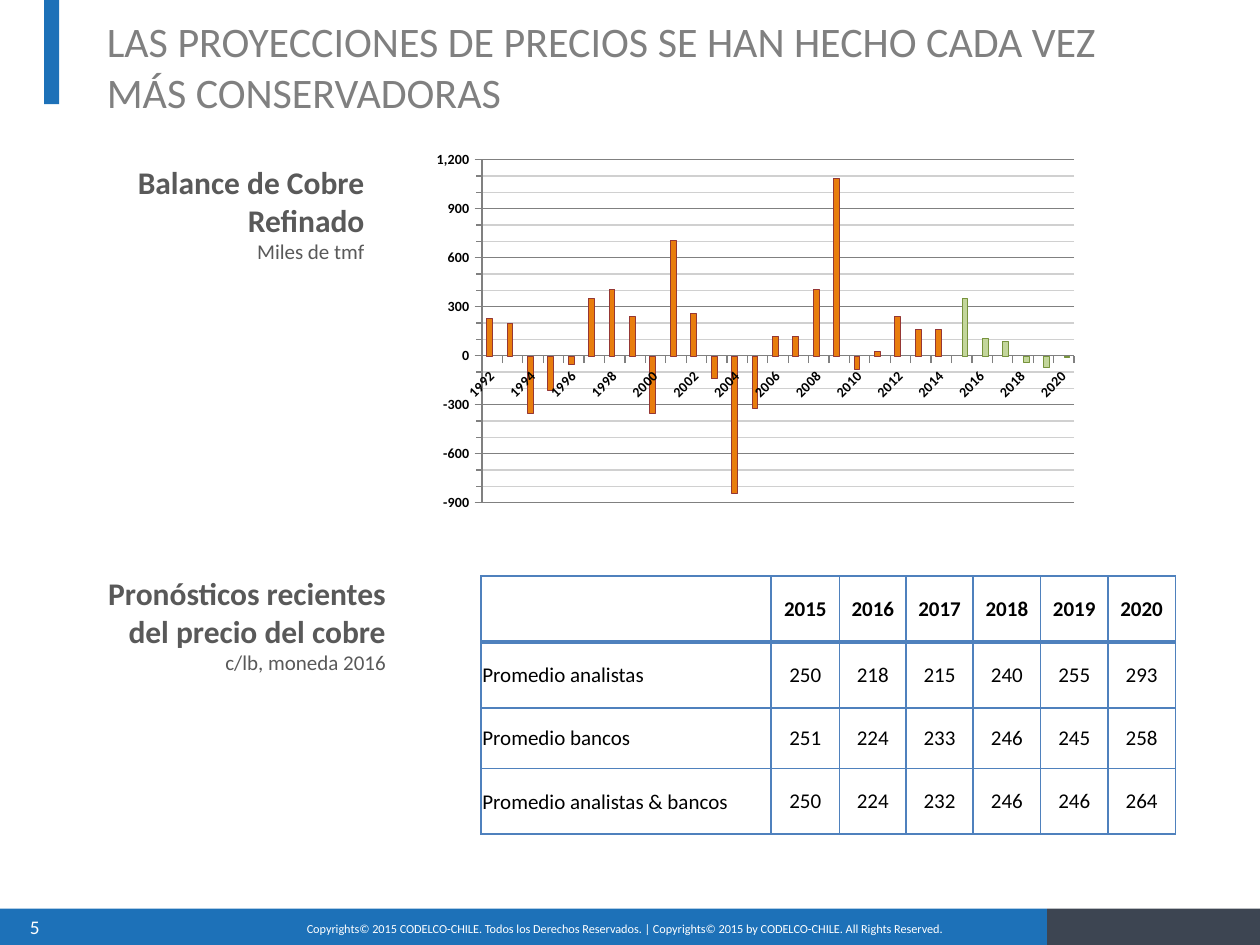
from dataclasses import dataclass
from lxml.etree import SubElement
from pptx import Presentation
from pptx.chart.data import CategoryChartData
from pptx.dml.color import RGBColor
from pptx.enum.chart import XL_CHART_TYPE, XL_TICK_LABEL_POSITION, XL_TICK_MARK
from pptx.enum.shapes import MSO_SHAPE
from pptx.enum.text import MSO_ANCHOR, PP_ALIGN
from pptx.oxml import parse_xml
from pptx.oxml.ns import nsdecls, qn
from pptx.util import Pt


@dataclass(frozen=True)
class Theme:
    font: str = "Calibri"
    blue: RGBColor = RGBColor(0x1D, 0x71, 0xB8)
    slate: RGBColor = RGBColor(0x3D, 0x45, 0x52)
    white: RGBColor = RGBColor(0xFF, 0xFF, 0xFF)
    black: RGBColor = RGBColor(0, 0, 0)
    gray: RGBColor = RGBColor(0x80, 0x80, 0x80)
    dark: RGBColor = RGBColor(0x59, 0x59, 0x59)
    pale: RGBColor = RGBColor(0xD0, 0xD0, 0xD0)
    orange: RGBColor = RGBColor(0xE8, 0x7D, 0x0D)
    red: RGBColor = RGBColor(0x95, 0x37, 0x35)
    green: RGBColor = RGBColor(0xC3, 0xD6, 0x9B)
    olive: RGBColor = RGBColor(0x77, 0x93, 0x3C)
    border: RGBColor = RGBColor(0x4F, 0x81, 0xBD)
    title: int = 24
    head: int = 18
    body: int = 12
    page: int = 11
    axis: int = 8
    foot: int = 7


theme = Theme()


def add_run(para, text, size, color, bold=False):
    run = para.add_run()
    run.text = text
    font = run.font
    font.name, font.size, font.bold = theme.font, Pt(size), bold
    font.color.rgb = color


def add_text(box, lines, align=PP_ALIGN.LEFT, anchor=MSO_ANCHOR.MIDDLE):
    """Each line is (text, size, color, bold) and makes one paragraph."""
    frame = slide.shapes.add_textbox(*map(Pt, box)).text_frame
    frame.word_wrap = True
    frame.vertical_anchor = anchor
    for i, line in enumerate(lines):
        para = frame.add_paragraph() if i else frame.paragraphs[0]
        para.alignment = align
        add_run(para, *line)


deck = Presentation()
deck.slide_width, deck.slide_height = Pt(720), Pt(540)
slide = deck.slides.add_slide(deck.slide_layouts[6])

# Footer bars and title mark
for box, color in [
    ((0, 519.2, 598.3, 20.8), theme.blue),
    ((25.2, 0, 8.6, 59.5), theme.blue),
    ((598.3, 519.2, 121.7, 20.8), theme.slate),
]:
    bar = slide.shapes.add_shape(MSO_SHAPE.RECTANGLE, *map(Pt, box))
    bar.shadow.inherit = False
    bar.fill.solid()
    bar.fill.fore_color.rgb = color
    bar.line.fill.background()

add_text((10, 515, 106, 29), [("5", theme.page, theme.white)])
add_text(
    (139, 522.7, 436, 14),
    [("Copyrights© 2015 CODELCO-CHILE. Todos los Derechos Reservados. | "
      "Copyrights© 2015 by CODELCO-CHILE. All Rights Reserved.",
      theme.foot, theme.white)],
    PP_ALIGN.CENTER, MSO_ANCHOR.TOP,
)
add_text(
    (54, 15.1, 629.3, 45.4),
    [("LAS PROYECCIONES DE PRECIOS SE HAN HECHO CADA VEZ MÁS CONSERVADORAS",
      theme.title, theme.gray)],
)

# Section labels
for box, name, unit in [
    ((70.6, 94.3, 144.7, 55.4), "Balance de Cobre Refinado", "Miles de tmf"),
    ((31, 329, 196.6, 55.4), "Pronósticos recientes del precio del cobre",
     "c/lb, moneda 2016"),
]:
    add_text(box, [(name, theme.head, theme.dark, True),
                   (unit, theme.body, theme.dark)], PP_ALIGN.RIGHT)

# Copper balance chart
past = [230, 200, -350, -210, -50, 350, 410, 240, -350, 710, 260, -140, -840,
        -320, 120, 120, 410, 1090, -80, 30, 240, 160, 160]
future = [350, 110, 90, -40, -70, -10]
data = CategoryChartData()
data.categories = [str(year) for year in range(1992, 2021)]
data.add_series("Series 1", past + [None] * len(future))
data.add_series("Series 2", [None] * len(past) + future)
chart = slide.shapes.add_chart(
    XL_CHART_TYPE.COLUMN_CLUSTERED, Pt(241.2), Pt(82.8), Pt(380.2), Pt(213.1), data
).chart
chart.has_legend = chart.has_title = False
chart.font.name = theme.font
chart.font.color.rgb = theme.black

plot = chart.plots[0]
plot.gap_width, plot.overlap = 150, 0
plot.vary_by_categories = False
for series, fill, line in zip(plot.series, (theme.orange, theme.green),
                              (theme.red, theme.olive)):
    series.invert_if_negative = False
    series.format.fill.solid()
    series.format.fill.fore_color.rgb = fill
    series.format.line.color.rgb = line
    series.format.line.width = Pt(0.25)

years, tons = chart.category_axis, chart.value_axis
for axis in (years, tons):
    axis.major_tick_mark = XL_TICK_MARK.OUTSIDE
    axis.tick_label_position = XL_TICK_LABEL_POSITION.NEXT_TO_AXIS
    axis.format.line.color.rgb = theme.gray
    font = axis.tick_labels.font
    font.name, font.size, font.bold = theme.font, Pt(theme.axis), True
    font.color.rgb = theme.black
years.has_major_gridlines = False
years._element.txPr.find(qn("a:bodyPr")).set("rot", "-2700000")
skip = parse_xml(f'<c:tickLblSkip {nsdecls("c")} val="2"/>')
years._element.find(qn("c:noMultiLvlLbl")).addprevious(skip)

tons.minimum_scale, tons.maximum_scale = -900, 1200
tons.major_unit, tons.minor_unit = 300, 100
tons.minor_tick_mark = XL_TICK_MARK.OUTSIDE
tons.tick_labels.number_format = "#,##0"
tons.tick_labels.number_format_is_linked = False
tons.has_major_gridlines = tons.has_minor_gridlines = True
for tag, color in (("majorGridlines", theme.gray), ("minorGridlines", theme.pale)):
    tons._element.find(qn(f"c:{tag}")).append(parse_xml(
        f'<c:spPr {nsdecls("c", "a")}><a:ln w="{Pt(0.75)}"><a:solidFill>'
        f'<a:srgbClr val="{color}"/></a:solidFill></a:ln></c:spPr>'))

area = chart._chartSpace.chart.plotArea
for old in area.findall(qn("c:layout")):
    area.remove(old)
area.insert(0, parse_xml(
    f'<c:layout {nsdecls("c")}><c:manualLayout><c:layoutTarget val="inner"/>'
    '<c:xMode val="edge"/><c:yMode val="edge"/><c:x val="0.09"/><c:y val="0.04"/>'
    '<c:w val="0.89"/><c:h val="0.92"/></c:manualLayout></c:layout>'))

# Price forecast table
rows = [
    ("", 2015, 2016, 2017, 2018, 2019, 2020),
    ("Promedio analistas", 250, 218, 215, 240, 255, 293),
    ("Promedio bancos", 251, 224, 233, 246, 245, 258),
    ("Promedio analistas & bancos", 250, 224, 232, 246, 246, 264),
]
wide = [165.5, 39.4, 37.8, 38.5, 38.5, 38.5, 38.5]
high = [37.7, 37.7, 34.5, 37.7]
table = slide.shapes.add_table(
    len(rows), len(wide), Pt(275), Pt(329.2), Pt(sum(wide)), Pt(sum(high))
).table
for col, width in zip(table.columns, wide):
    col.width = Pt(width)
for row, height in zip(table.rows, high):
    row.height = Pt(height)

for r, row in enumerate(rows):
    for c, value in enumerate(row):
        cell = table.cell(r, c)
        cell.margin_left = cell.margin_right = cell.margin_top = Pt(0 if c else 0.7)
        cell.margin_bottom = 0
        cell.vertical_anchor = MSO_ANCHOR.MIDDLE
        para = cell.text_frame.paragraphs[0]
        para.alignment = PP_ALIGN.CENTER if c else PP_ALIGN.LEFT
        if value:
            add_run(para, str(value), theme.body, theme.black, r == 0)
        cell.fill.background()
        props = cell._tc.get_or_add_tcPr()
        # Borders must stand before the fill, in the order left to bottom
        for i, side in enumerate("LRTB"):
            thick = (r, side) in ((0, "B"), (1, "T"))
            edge = SubElement(props, qn(f"a:ln{side}"), w=str(Pt(2 if thick else 1)))
            paint = SubElement(edge, qn("a:solidFill"))
            SubElement(paint, qn("a:srgbClr"), val=str(theme.border))
            props.insert(i, edge)

deck.save("out.pptx")
